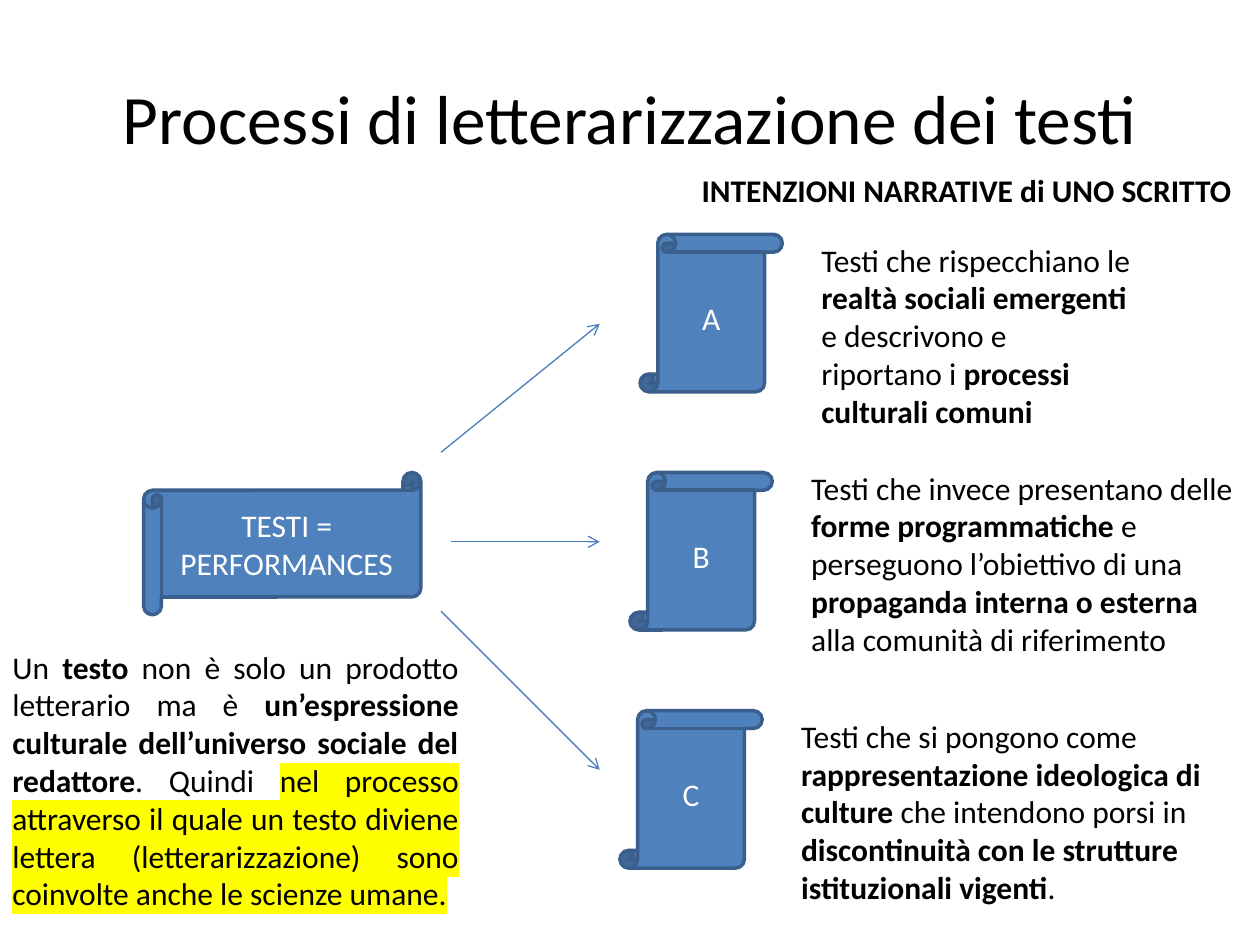
import pptx
import pptx.util
import pptx.dml.color
import pptx.enum.shapes
import pptx.enum.text
import pptx.oxml
import pptx.oxml.ns
from pptx.util import Inches

HUES = {
    "text": "000000",
    "white": "FFFFFF",
    "fill": "4F81BD",
    "edge": "3A5F8C",
    "arrow": "4B7EBC",
    "mark": "FFFF00",
}
FONT = "Calibri"
SHAPE = pptx.enum.shapes.MSO_SHAPE
ALIGN = pptx.enum.text.PP_ALIGN
ANCHOR = pptx.enum.text.MSO_ANCHOR


def color(name):
    return pptx.dml.color.RGBColor.from_string(HUES[name])


def node(tag, inner=""):
    space = pptx.oxml.ns.nsdecls("a")
    return pptx.oxml.parse_xml(f"<a:{tag} {space}>{inner}</a:{tag}>")


def write(frame, text, size=18, hue="text", align=ALIGN.LEFT,
          anchor=ANCHOR.TOP, wrap=True, bold=False, mark=""):
    """Fill a frame; *stars* enclose bold words, mark is highlighted."""
    frame.word_wrap = wrap
    frame.vertical_anchor = anchor
    para = frame.paragraphs[0]
    para.alignment = align
    parts = [(part, bold or i % 2 == 1, False)
             for i, part in enumerate(text.split("*"))]
    parts.append((mark, bold, True))
    for part, heavy, lit in parts:
        if not part:
            continue
        run = para.add_run()
        run.text = part
        run.font.size = pptx.util.Pt(size)
        run.font.bold = heavy
        run.font.name = FONT
        run.font.color.rgb = color(hue)
        if lit:
            fill = run.font._element.find(pptx.oxml.ns.qn("a:solidFill"))
            fill.addnext(node("highlight", f'<a:srgbClr val="{HUES["mark"]}"/>'))


def label(slide, box, text, **form):
    shape = slide.shapes.add_textbox(*map(Inches, box))
    write(shape.text_frame, text, **form)


def scroll(slide, kind, box, text):
    shape = slide.shapes.add_shape(kind, *map(Inches, box))
    shape.shadow.inherit = False
    shape.fill.solid()
    shape.fill.fore_color.rgb = color("fill")
    shape.line.color.rgb = color("edge")
    shape.line.width = pptx.util.Pt(2)
    write(shape.text_frame, text, hue="white", align=ALIGN.CENTER,
          anchor=ANCHOR.MIDDLE)


def arrow(slide, start, end):
    line = slide.shapes.add_connector(
        pptx.enum.shapes.MSO_CONNECTOR.STRAIGHT, *map(Inches, start + end))
    line.line.color.rgb = color("arrow")
    line.line.width = pptx.util.Pt(0.75)
    tail = node("tailEnd")
    tail.set("type", "arrow")
    line.line._get_or_add_ln().append(tail)
    line._element.spPr.append(node("effectLst"))


def main():
    deck = pptx.Presentation()
    deck.slide_width, deck.slide_height = Inches(10), Inches(7.5)
    slide = deck.slides.add_slide(deck.slide_layouts[6])

    # Headings
    label(slide, (0.5, 0.3, 9, 1.25), "Processi di letterarizzazione dei testi",
          size=39.6, align=ALIGN.CENTER, anchor=ANCHOR.MIDDLE)
    label(slide, (5.47, 1.31, 4.44, 0.4), "INTENZIONI NARRATIVE di UNO SCRITTO",
          bold=True, wrap=False)

    # Source scroll and its comment
    scroll(slide, SHAPE.HORIZONTAL_SCROLL, (1.14, 3.75, 2.2, 1.13),
           "TESTI = PERFORMANCES")
    label(slide, (0, 5.09, 3.74, 2.22),
          "Un *testo* non è solo un prodotto letterario ma è *un’espressione "
          "culturale dell’universo sociale del redattore*. Quindi ",
          align=ALIGN.JUSTIFY,
          mark="nel processo attraverso il quale un testo diviene lettera "
               "(letterarizzazione) sono coinvolte anche le scienze umane.")

    # Three intentions, each a scroll with its text
    aims = [
        ("A", (6.42, 1.86, 2.68),
         "Testi che rispecchiano le *realtà sociali emergenti *"
         "e descrivono e riportano i *processi culturali comuni*"),
        ("B", (6.34, 3.67, 3.66),
         "Testi che invece presentano delle *forme programmatiche *"
         "e perseguono l’obiettivo di una *propaganda interna o esterna *"
         "alla comunità di riferimento"),
        ("C", (6.26, 5.64, 3.74),
         "Testi che si pongono come *rappresentazione ideologica di culture *"
         "che intendono porsi in *discontinuità con le strutture "
         "istituzionali vigenti*."),
    ]
    for i, (name, box, text) in enumerate(aims):
        scroll(slide, SHAPE.VERTICAL_SCROLL,
               (5.08 - 0.08 * i, 1.86 + 1.89 * i, 1.13, 1.25), name)
        label(slide, box + (1.62,), text)

    # Arrows from the source to the intentions
    for start, high in (((3.5, 3.59), 2.57), ((3.58, 4.3), 4.3),
                        ((3.5, 4.85), 6.11)):
        arrow(slide, start, (4.76, high))

    deck.save("out.pptx")


if __name__ == "__main__":
    main()
